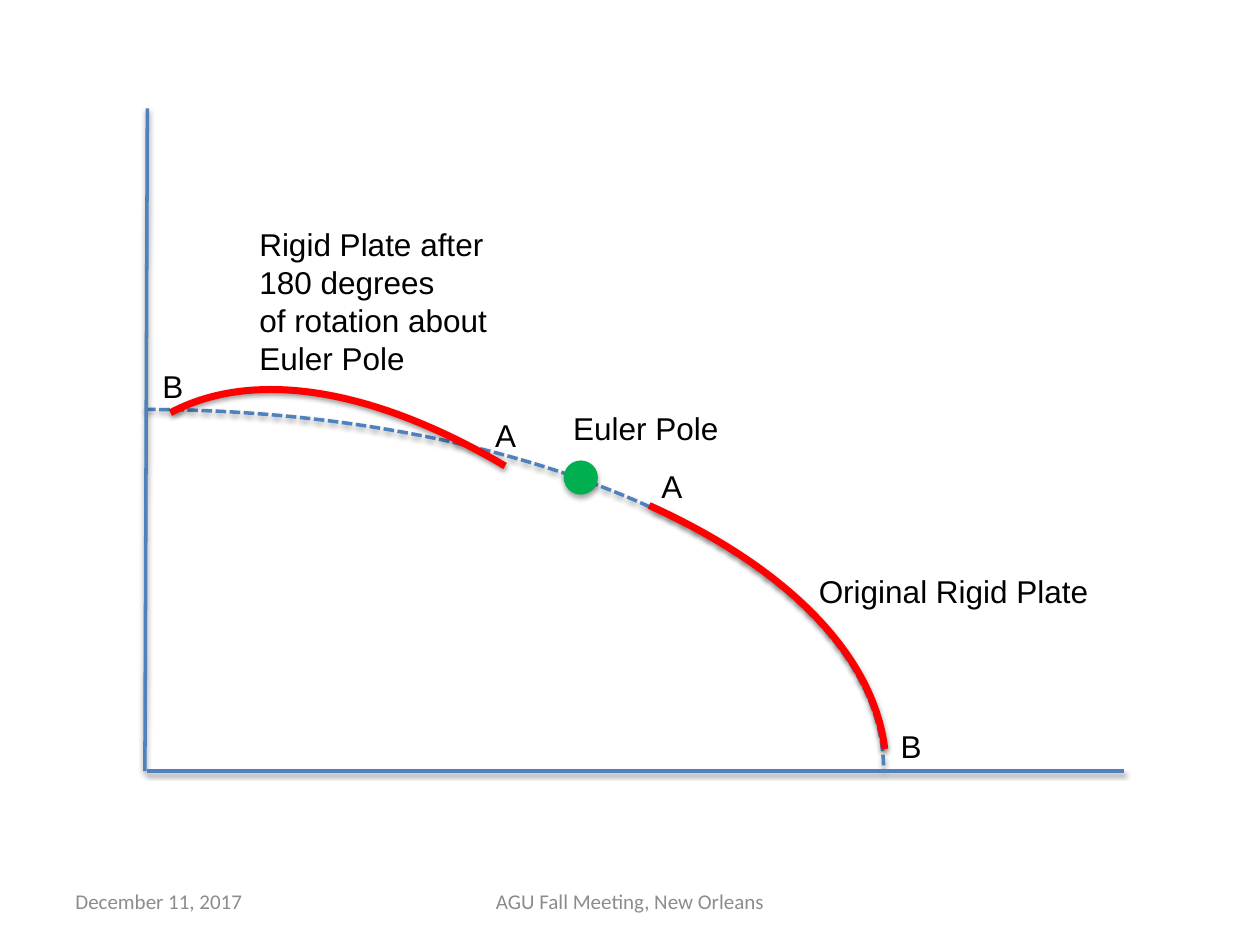
import pptx
import pptx.dml.color
import pptx.enum.dml
import pptx.enum.shapes
import pptx.enum.text
import pptx.oxml
import pptx.oxml.ns
import pptx.util
from dataclasses import dataclass

Pt = pptx.util.Pt
SHAPE = pptx.enum.shapes.MSO_SHAPE
ALIGN = pptx.enum.text.PP_ALIGN
ANCHOR = pptx.enum.text.MSO_ANCHOR


@dataclass(frozen=True)
class Theme:
    axis: str = "4F81BD"
    plate: str = "FF0000"
    pole: str = "00B050"
    ink: str = "000000"
    muted: str = "8C8C8C"
    label_font: str = "Arial"
    footer_font: str = "Calibri"
    label_size: float = 18
    footer_size: float = 12


THEME = Theme()
RADII = (422, 206.3)         # of the ellipse all arcs lie on
PLATE_ANGLES = (199.29, 215)  # arc adjustments at ends A and B


def rgb(value):
    return pptx.dml.color.RGBColor.from_string(value)


def add_text(s, text, box, size=THEME.label_size, font=THEME.label_font, color=THEME.ink,
             align=ALIGN.LEFT, anchor=ANCHOR.TOP, wrap=False):
    """Each line of text becomes a paragraph."""
    tf = s.shapes.add_textbox(*map(Pt, box)).text_frame
    tf.word_wrap = wrap
    tf.vertical_anchor = anchor
    if not wrap:
        tf.auto_size = pptx.enum.text.MSO_AUTO_SIZE.SHAPE_TO_FIT_TEXT
    for i, line in enumerate(text.split("\n")):
        p = tf.add_paragraph() if i else tf.paragraphs[0]
        p.alignment = align
        r = p.add_run()
        r.text = line
        r.font.size, r.font.name = Pt(size), font
        r.font.color.rgb = rgb(color)


def style_line(sp, color, width, dash=None, shadow=38, distance=1.6):
    """Set the outline and a soft shadow straight below."""
    sp.line.color.rgb = rgb(color)
    sp.line.width = Pt(width)
    if dash:
        sp.line.dash_style = dash
    sp._element.spPr.append(pptx.oxml.parse_xml(
        f'<a:effectLst {pptx.oxml.ns.nsdecls("a")}>'
        f'<a:outerShdw blurRad="{Pt(3.1)}" dist="{Pt(distance)}" dir="5400000" rotWithShape="0">'
        f'<a:srgbClr val="000000"><a:alpha val="{shadow * 1000}"/></a:srgbClr>'
        '</a:outerShdw></a:effectLst>'))


def add_round(s, kind, cx, cy, rx, ry):
    return s.shapes.add_shape(kind, Pt(cx - rx), Pt(cy - ry), Pt(2 * rx), Pt(2 * ry))


def add_arc(s, cx, cy, color, width, angles=None, dash=None, rotation=0, flip=False):
    sp = add_round(s, SHAPE.ARC, cx, cy, *RADII)
    if angles:
        sp.adjustments[0], sp.adjustments[1] = angles
    sp.rotation = rotation
    if flip:
        sp._element.spPr.xfrm.set("flipH", "1")
    sp.fill.background()
    style_line(sp, color, width, dash)


def add_axis(s, x1, y1, x2, y2):
    line = s.shapes.add_connector(pptx.enum.shapes.MSO_CONNECTOR.STRAIGHT,
                                  Pt(x1), Pt(y1), Pt(x2), Pt(y2))
    style_line(line, THEME.axis, 2)


def diagram(s, box):
    """Axes fill the box; everything else is placed from their corner."""
    x, top, w, h = box
    y = top + h
    add_arc(s, x - 1.2, y - 0.3, THEME.axis, 2,
            dash=pptx.enum.dml.MSO_LINE.SQUARE_DOT)
    add_axis(s, x, top, x - 1.4, y)
    add_axis(s, x + w, y, x, y)
    add_arc(s, x + 0.2, y - 0.3, THEME.plate, 4, PLATE_ANGLES)

    pole = add_round(s, SHAPE.OVAL, x + 247.7, y - 167.7, 9.4, 9.4)
    pole.fill.solid()
    pole.fill.fore_color.rgb = rgb(THEME.pole)
    style_line(pole, THEME.pole, 0.75, shadow=35, distance=1.8)

    add_arc(s, x + 244.8, y + 147.3, THEME.plate, 4, PLATE_ANGLES, rotation=55, flip=True)

    labels = [
        ("A", 286.6, -177.1, 26.6, 29),
        ("B", 1.5, -234.7, 26.6, 29),
        ("A", 191.6, -206.6, 26.6, 29),
        ("B", 423.4, -28.8, 26.6, 29),
        ("Original Rigid Plate", 376.6, -117.3, 170, 29),
        ("Euler Pole", 236.2, -210.2, 98.6, 29),
        ("Rigid Plate after\n180 degrees\nof rotation about\nEuler Pole",
         56.9, -315.3, 151.2, 94.3),
    ]
    for text, dx, dy, width, height in labels:
        add_text(s, text, (x + dx, y + dy, width, height))


def footer(s, box):
    x, y, w, h = box
    fmt = dict(size=THEME.footer_size, font=THEME.footer_font, color=THEME.muted,
               anchor=ANCHOR.MIDDLE, wrap=True)
    add_text(s, "December 11, 2017", (x, y, 168, h), **fmt)
    add_text(s, "AGU Fall Meeting, New Orleans", (x + (w - 228) / 2, y, 228, h),
             align=ALIGN.CENTER, **fmt)


def main():
    prs = pptx.Presentation()
    prs.slide_width, prs.slide_height = Pt(720), Pt(540)
    s = prs.slides.add_slide(prs.slide_layouts[6])
    footer(s, (36, 500.5, 648, 28.75))
    diagram(s, (84.2, 62, 558, 378.6))
    prs.save("out.pptx")


if __name__ == "__main__":
    main()
